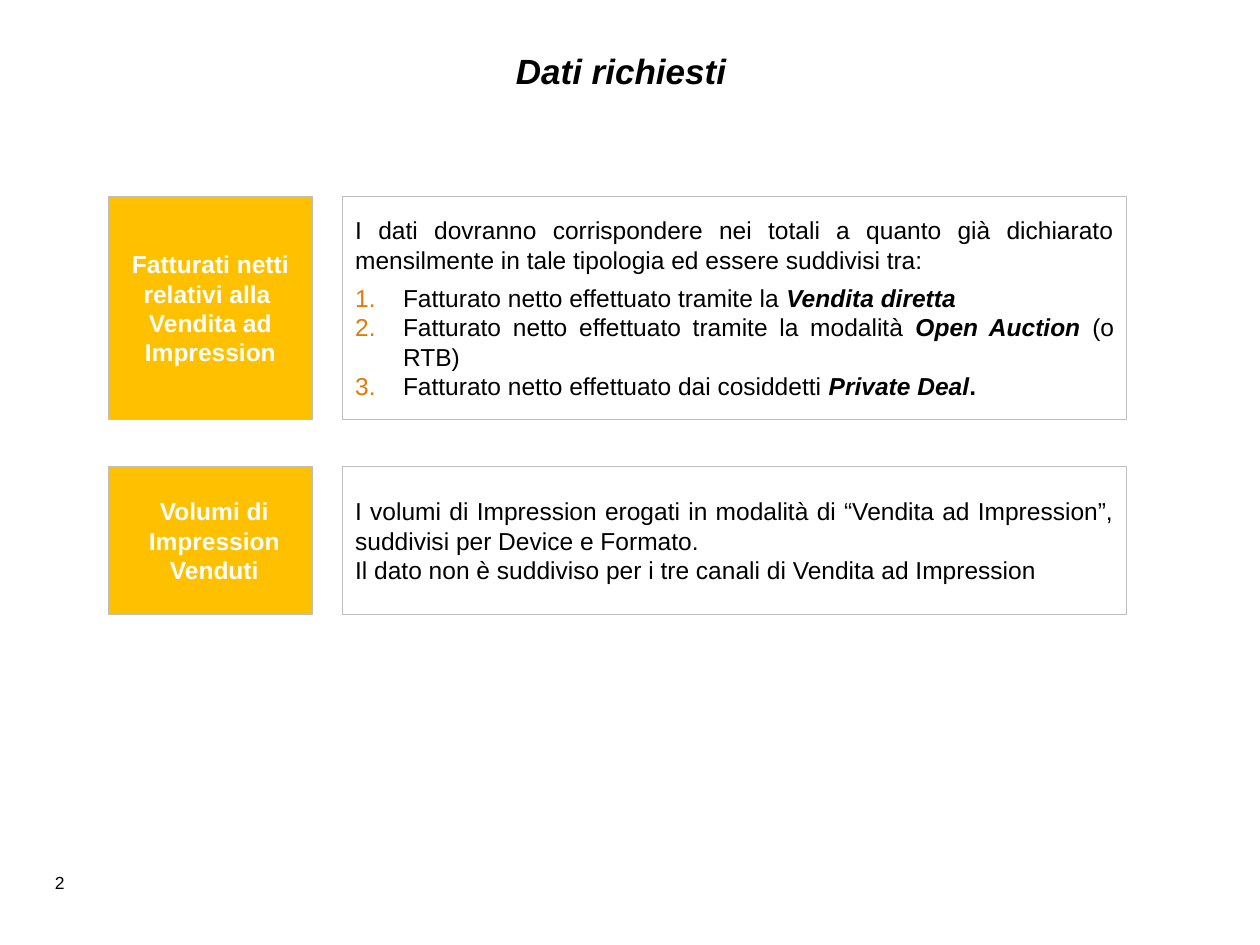
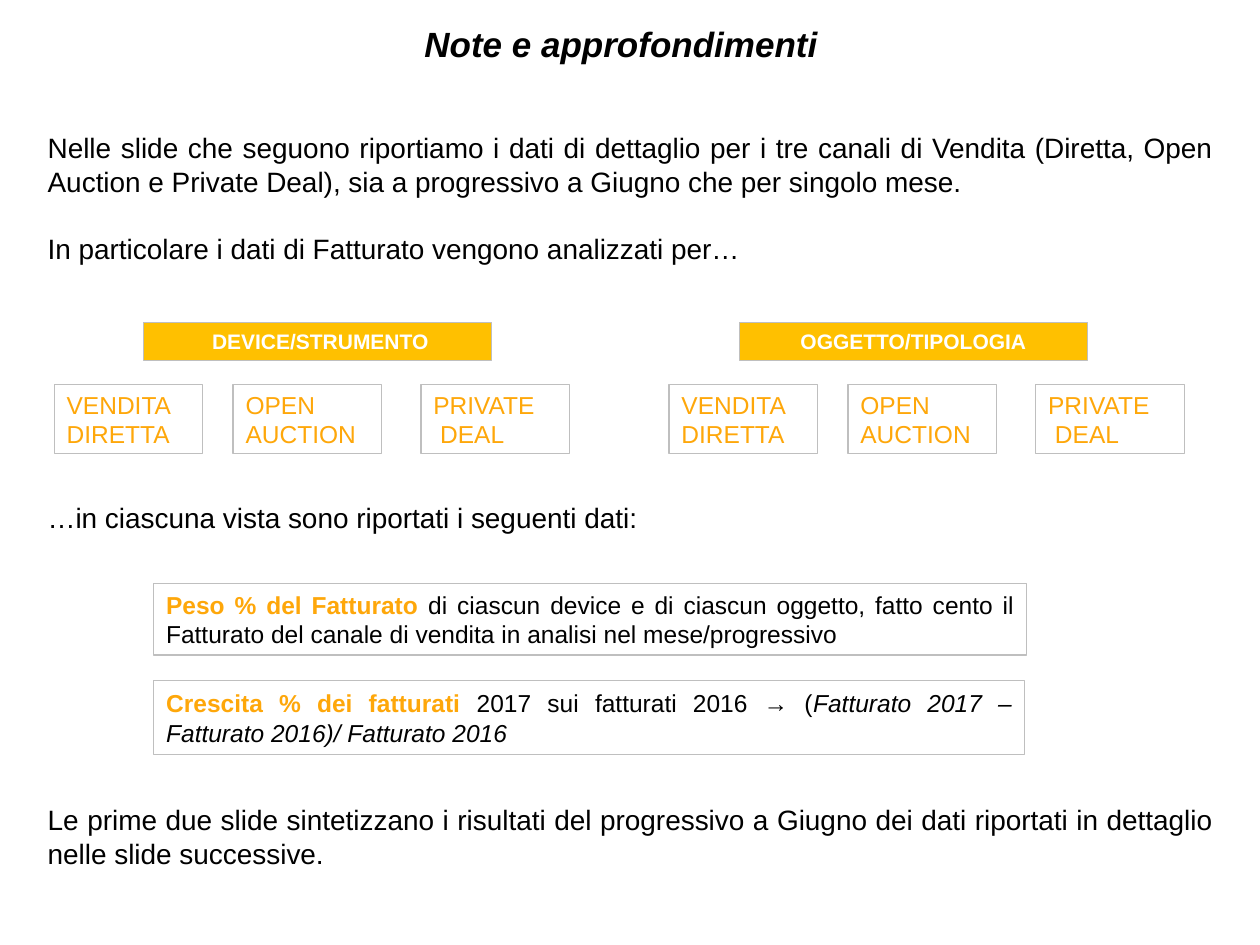
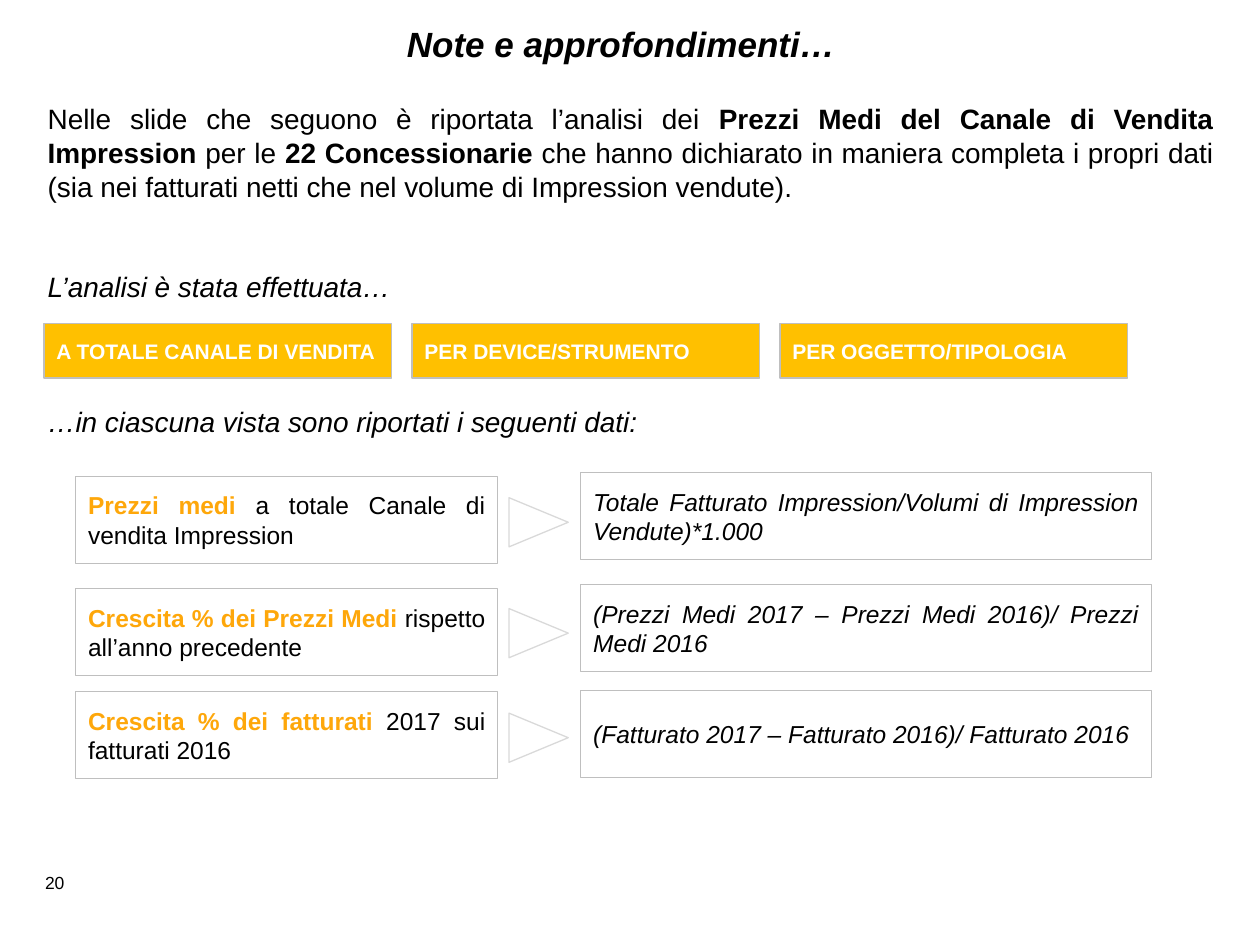
"""Build three slides on requested data and notes for impression sales."""
from lxml import etree
from pptx import Presentation
from pptx.dml.color import RGBColor as RGB
from pptx.enum.shapes import MSO_SHAPE as SHAPE
from pptx.enum.text import MSO_ANCHOR as ANCHOR, PP_ALIGN as ALIGN
from pptx.oxml.ns import qn
from pptx.util import Inches, Pt

COLORS = {
    "white": "FFFFFF", "black": "000000", "gold": "FFC000", "orange": "FEA70A",
    "number": "E27A08", "border": "BFBFBF", "arrow": "D9D9D9",
}
FONT = "Arial"
LINE = 19.2
BOLD = {"bold": True}
ITALIC = {"italic": True}
BOLD_ITALIC = {"bold": True, "italic": True}
LEAD = {"bold": True, "color": "orange"}
TITLE = {"size": 20, "bold": True, "italic": True, "align": ALIGN.CENTER,
         "plain": True, "anchor": ANCHOR.TOP}
NUMBER = {"size": 10, "align": ALIGN.RIGHT, "plain": True, "anchor": ANCHOR.TOP}
BODY = {"size": 16, "fill": "white", "line": None, "anchor": ANCHOR.TOP}
LABEL = {"fill": "gold", "color": "white", "bold": True}


def add_text(s, box, paras, size=14, color="black", bold=False, italic=False,
             align=ALIGN.JUSTIFY, anchor=ANCHOR.MIDDLE, fill=None, line="border",
             plain=False, before=None, numbered=(), left=0.1):
    """Add a box whose paragraphs are strings or lists of (text, format) runs."""
    frame = [Inches(v) for v in box]
    if plain:
        sp = s.shapes.add_textbox(*frame)
    else:
        sp = s.shapes.add_shape(SHAPE.RECTANGLE, *frame)
        sp.shadow.inherit = False
        if fill:
            sp.fill.solid()
            sp.fill.fore_color.rgb = RGB.from_string(COLORS[fill])
        else:
            sp.fill.background()
        if line:
            sp.line.color.rgb = RGB.from_string(COLORS[line])
            sp.line.width = Pt(0.75)
        else:
            sp.line.fill.background()
    tf = sp.text_frame
    tf.word_wrap = True
    tf.vertical_anchor = anchor
    tf.margin_left = Inches(left)
    for i, runs in enumerate(paras):
        p = tf.paragraphs[0] if i == 0 else tf.add_paragraph()
        p.alignment = align
        if before and i in before:
            p.space_before = Pt(before[i])
        if i in numbered:
            pPr = p._p.get_or_add_pPr()
            pPr.set("marL", str(Inches(0.38)))
            pPr.set("indent", str(-Inches(0.38)))
            clr = etree.SubElement(pPr, qn("a:buClr"))
            etree.SubElement(clr, qn("a:srgbClr"), val=COLORS["number"])
            etree.SubElement(pPr, qn("a:buFont"), typeface="+mj-lt")
            etree.SubElement(pPr, qn("a:buAutoNum"), type="arabicPeriod")
        for text, fmt in [(runs, {})] if isinstance(runs, str) else runs:
            r = p.add_run()
            r.text = text
            r.font.name = FONT
            r.font.size = Pt(size)
            r.font.bold = fmt.get("bold", bold)
            r.font.italic = fmt.get("italic", italic)
            r.font.color.rgb = RGB.from_string(COLORS[fmt.get("color", color)])


prs = Presentation()
prs.slide_width, prs.slide_height = Inches(10), Inches(7.5)
slides = []
for number, title, top in [("2", "Dati richiesti", 0.34),
                           (None, "Note e approfondimenti", 0.13),
                           ("20", "Note e approfondimenti…", 0.13)]:
    s = prs.slides.add_slide(prs.slide_layouts[6])
    if number:
        add_text(s, (0.18, 6.87, 0.43, 0.27), [number], **NUMBER)
    add_text(s, (0.36, top, 9.14, 0.57), [title], **TITLE)
    slides.append(s)
data, notes, prices = slides

revenue = [
    "I dati dovranno corrispondere nei totali a quanto già dichiarato mensilmente "
    "in tale tipologia ed essere suddivisi tra:",
    [("Fatturato netto effettuato tramite la ", {}), ("Vendita diretta", BOLD_ITALIC)],
    [("Fatturato netto effettuato tramite la modalità ", {}),
     ("Open Auction ", BOLD_ITALIC), ("(o RTB)", {})],
    [("Fatturato netto effettuato dai cosiddetti ", {}),
     ("Private Deal", BOLD_ITALIC), (".", BOLD)],
]
volumes = [
    "I volumi di Impression erogati in modalità di “Vendita ad Impression”, "
    "suddivisi per Device e Formato. ",
    "Il dato non è suddiviso per i tre canali di Vendita ad Impression ",
]
add_text(data, (2.72, 1.56, 6.22, 1.77), revenue, before={1: 5}, numbered=(1, 2, 3))
add_text(data, (2.72, 3.7, 6.22, 1.18), volumes)
add_text(data, (0.86, 1.56, 1.62, 1.77),
         ["Fatturati netti relativi alla ", "Vendita ad Impression"],
         align=ALIGN.CENTER, **LABEL)
add_text(data, (0.86, 3.7, 1.62, 1.18), ["Volumi di Impression Venduti"],
         align=ALIGN.CENTER, left=0.16, **LABEL)

add_text(notes, (0.28, 0.99, 9.45, 6.02), [
    "Nelle slide che seguono riportiamo i dati di dettaglio per i tre canali di "
    "Vendita (Diretta, Open Auction e Private Deal), sia a progressivo a Giugno "
    "che per singolo mese.",
    "In particolare i dati di Fatturato vengono analizzati per…",
    "…in ciascuna vista sono riportati i seguenti dati:",
    "Le prime due slide sintetizzano i risultati del progressivo a Giugno dei dati "
    "riportati in dettaglio nelle slide successive.",
], before={1: LINE, 2: 7 * LINE, 3: 8 * LINE}, **BODY)
add_text(notes, (1.22, 4.63, 6.93, 0.57), [[
    ("Peso % del Fatturato ", LEAD),
    ("di ciascun device e di ciascun oggetto, fatto cento il Fatturato del canale "
     "di vendita in analisi nel mese/progressivo", {})]])
add_text(notes, (1.22, 5.4, 6.91, 0.59), [[
    ("Crescita % dei fatturati ", LEAD), ("2017 sui fatturati 2016 → (", {}),
    ("Fatturato 2017 – Fatturato 2016)/ Fatturato 2016", ITALIC)]])
channels = [(0, ["VENDITA ", "DIRETTA "]), (1.42, ["OPEN ", "AUCTION"]),
            (2.91, ["PRIVATE", " DEAL"])]
for view, view_left, channel_left in [(" DEVICE/STRUMENTO", 1.14, 0.43),
                                      ("OGGETTO/TIPOLOGIA", 5.87, 5.31)]:
    add_text(notes, (view_left, 2.56, 2.76, 0.3), [view], size=12,
             align=ALIGN.CENTER, **LABEL)
    for offset, channel in channels:
        add_text(notes, (channel_left + offset, 3.05, 1.18, 0.55), channel,
                 color="orange")

add_text(prices, (0.28, 0.76, 9.45, 2.79), [
    [("Nelle slide che seguono è riportata l’analisi dei ", {}),
     ("Prezzi Medi del Canale di Vendita Impression ", BOLD), ("per le ", {}),
     ("22 Concessionarie ", BOLD),
     ("che hanno dichiarato in maniera completa i propri dati (sia nei fatturati "
      "netti che nel volume di Impression vendute). ", {})],
    [("L’analisi è stata effettuata…", ITALIC)],
    [("…in ciascuna vista sono riportati i seguenti dati:", ITALIC)],
], before={1: 2 * LINE, 2: 3 * LINE}, **BODY)
for i, view in enumerate(["A TOTALE CANALE DI VENDITA", "PER DEVICE/STRUMENTO",
                          "PER OGGETTO/TIPOLOGIA"]):
    add_text(prices, (0.35 + i * 2.92, 2.57, 2.76, 0.43), [view], size=12, **LABEL)
measures = [
    (3.78, 3.91, 3.75, "Prezzi medi ", "a totale Canale di vendita Impression",
     "Totale Fatturato Impression/Volumi di Impression Vendute)*1.000"),
    (4.67, 4.79, 4.64, "Crescita % dei Prezzi Medi ", "rispetto all’anno precedente",
     "(Prezzi Medi 2017 – Prezzi Medi 2016)/ Prezzi Medi 2016"),
    (5.49, 5.62, 5.48, "Crescita % dei fatturati ", "2017 sui fatturati 2016",
     "(Fatturato 2017 – Fatturato 2016)/ Fatturato 2016"),
]
for measure_top, arrow_top, formula_top, lead, rest, formula in measures:
    add_text(prices, (0.6, measure_top, 3.35, 0.69), [[(lead, LEAD), (rest, {})]])
    add_text(prices, (4.61, formula_top, 4.53, 0.69), [formula], italic=True)
    arrow = prices.shapes.add_shape(SHAPE.ISOSCELES_TRIANGLE, Inches(4.08),
                                    Inches(arrow_top), Inches(0.39), Inches(0.47))
    arrow.rotation = 90
    arrow.shadow.inherit = False
    arrow.fill.solid()
    arrow.fill.fore_color.rgb = RGB.from_string(COLORS["white"])
    arrow.line.color.rgb = RGB.from_string(COLORS["arrow"])
    arrow.line.width = Pt(0.75)

prs.save("out.pptx")
